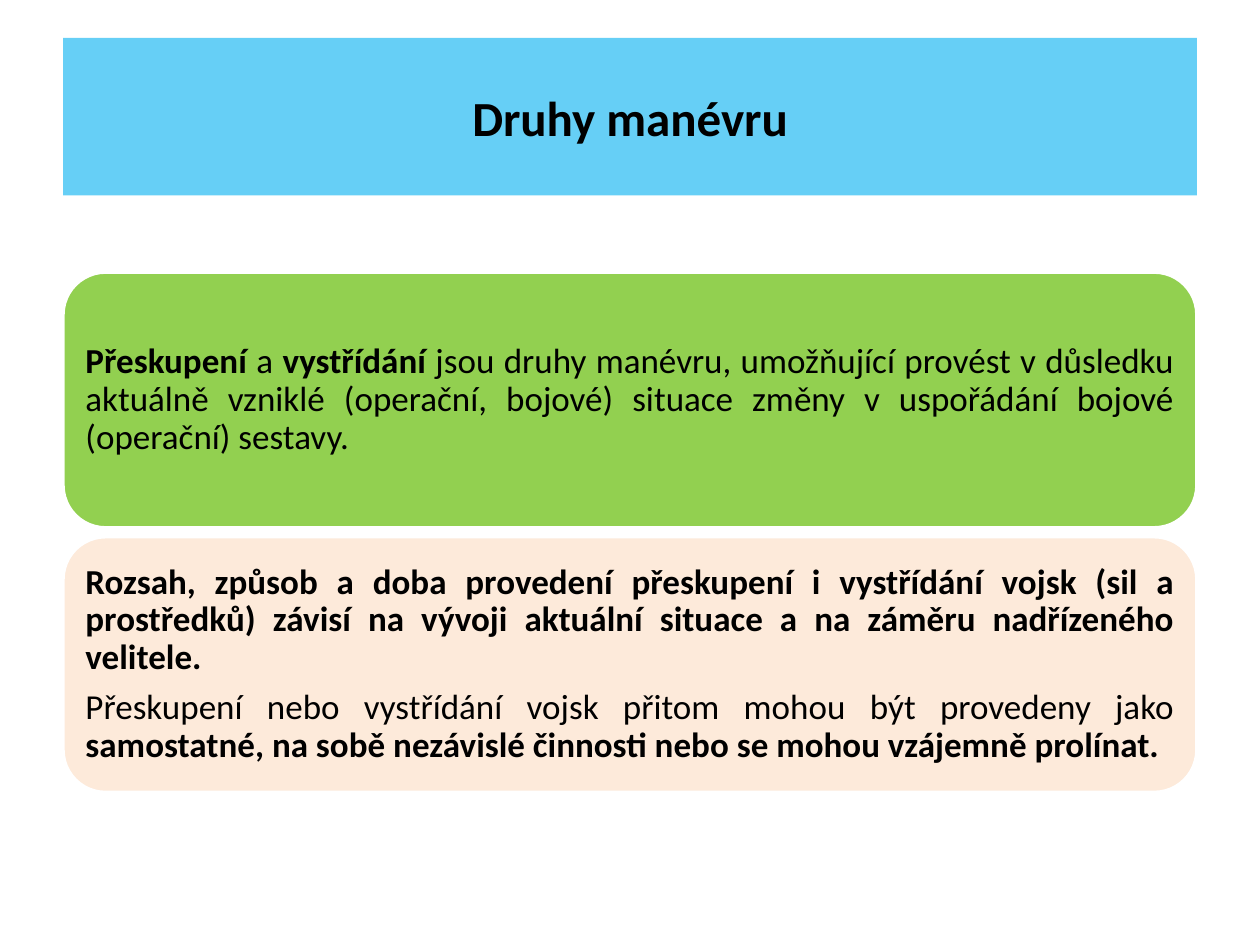
import dataclasses

import pptx
import pptx.dml.color
import pptx.enum.shapes
import pptx.enum.text
import pptx.oxml.ns
import pptx.util
from lxml import etree

Inches = pptx.util.Inches
Pt = pptx.util.Pt
ALIGN = pptx.enum.text.PP_ALIGN
MIDDLE = pptx.enum.text.MSO_ANCHOR.MIDDLE


@dataclasses.dataclass(frozen=True)
class Theme:
    font: str = "Calibri"
    ink: str = "000000"
    paper: str = "FFFFFF"
    band: str = "00B0F0"
    green: str = "92D050"
    peach: str = "FDEADA"
    head: int = 28
    body: int = 20


THEME = Theme()
LEFT, WIDTH = 0.5, 9
TOP, HEIGHT, STEP = 2.16, 2.03, 2.1

# Each panel is a fill and its paragraphs of (text, bold) runs
PANELS = [
    (THEME.green, [
        [("Přeskupení", True), (" a ", False), ("vystřídání", True),
         (" jsou druhy manévru, umožňující provést v důsledku aktuálně "
          "vzniklé (operační, bojové) situace změny v uspořádání bojové "
          "(operační) sestavy.", False)],
    ]),
    (THEME.peach, [
        [("Rozsah, způsob a doba provedení přeskupení i vystřídání vojsk "
          "(sil a prostředků) závisí na vývoji aktuální situace a na záměru "
          "nadřízeného velitele.", True)],
        [("Přeskupení nebo vystřídání vojsk přitom mohou být provedeny "
          "jako ", False),
         ("samostatné, na sobě nezávislé činnosti nebo se mohou vzájemně "
          "prolínat.", True)],
    ]),
]


def color(code):
    return pptx.dml.color.RGBColor.from_string(code)


def paint(shape, code, alpha=None):
    shape.fill.solid()
    shape.fill.fore_color.rgb = color(code)
    if alpha is not None:
        tone = shape.fill._xPr.find(".//" + pptx.oxml.ns.qn("a:srgbClr"))
        etree.SubElement(tone, pptx.oxml.ns.qn("a:alpha"),
                         val=str(alpha * 1000))


def style(font, size):
    font.name = THEME.font
    font.size = Pt(size)
    font.color.rgb = color(THEME.ink)


def add_title(slide, text):
    title = slide.shapes.title
    title.left, title.top = Inches(LEFT), Inches(0.3)
    title.width, title.height = Inches(WIDTH), Inches(1.25)
    paint(title, THEME.band, alpha=60)
    frame = title.text_frame
    frame.text = text
    frame.vertical_anchor = MIDDLE
    para = frame.paragraphs[0]
    para.alignment = ALIGN.CENTER
    style(para.font, THEME.head)
    para.font.bold = True


def add_panel(slide, top, fill, paras):
    panel = slide.shapes.add_shape(
        pptx.enum.shapes.MSO_SHAPE.ROUNDED_RECTANGLE,
        Inches(LEFT), Inches(top), Inches(WIDTH), Inches(HEIGHT))
    panel.shadow.inherit = False
    paint(panel, fill)
    panel.line.color.rgb = color(THEME.paper)
    panel.line.width = Pt(2)
    frame = panel.text_frame
    frame.word_wrap = True
    frame.vertical_anchor = MIDDLE
    frame.margin_left = frame.margin_right = Inches(0.08)
    frame.margin_top = frame.margin_bottom = Inches(0.08)
    for i, runs in enumerate(paras):
        para = frame.add_paragraph() if i else frame.paragraphs[0]
        para.alignment = ALIGN.JUSTIFY
        para.line_spacing = 0.9
        para.space_after = Pt(THEME.body * 0.35)
        style(para.font, THEME.body)
        for text, bold in runs:
            run = para.add_run()
            run.text = text
            run.font.bold = bold


def main():
    deck = pptx.Presentation()
    deck.slide_width, deck.slide_height = Inches(10), Inches(7.5)
    slide = deck.slides.add_slide(deck.slide_layouts[5])

    # Heading band
    add_title(slide, "Druhy manévru")

    # Stacked text panels
    for i, (fill, paras) in enumerate(PANELS):
        add_panel(slide, TOP + i * STEP, fill, paras)

    deck.save("out.pptx")


if __name__ == "__main__":
    main()
